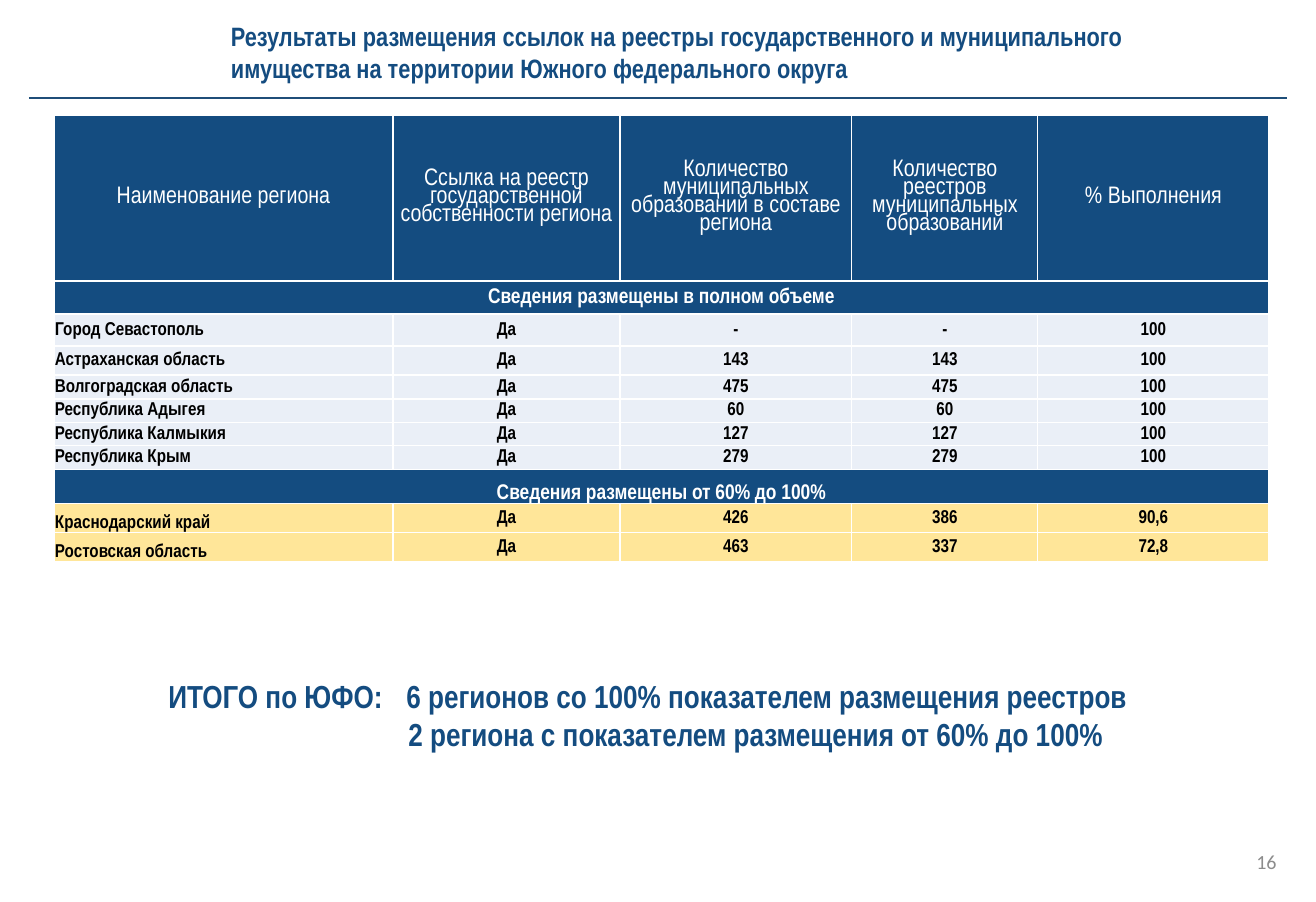
"""Build the slide with registry link results for the Southern Federal District."""
from lxml.etree import SubElement
from pptx import Presentation
from pptx.dml.color import RGBColor
from pptx.enum.shapes import MSO_CONNECTOR
from pptx.enum.text import MSO_ANCHOR, PP_ALIGN
from pptx.oxml.ns import qn
from pptx.util import Pt

PX = 9575
THEME = {
    "navy": RGBColor.from_string("144C80"),
    "rule": RGBColor.from_string("1F4E79"),
    "white": RGBColor.from_string("FFFFFF"),
    "black": RGBColor.from_string("000000"),
    "grey": RGBColor.from_string("8C8C8C"),
    "pale": RGBColor.from_string("EAEFF7"),
    "yellow": RGBColor.from_string("FFE699"),
    "font": "Arial Narrow",
    "number_font": "Calibri",
    "title": 20, "total": 24, "number": 15.1,
    "head": 18, "section": 16, "body": 14,
}


def write(tf, lines, size, color, bold=True, font="font", align=PP_ALIGN.LEFT):
    for i, line in enumerate(lines):
        p = tf.paragraphs[0] if i == 0 else tf.add_paragraph()
        p.alignment = align
        r = p.add_run()
        r.text = line
        r.font.color.rgb = THEME[color]
        values = {"name": THEME[font], "size": Pt(THEME[size]), "bold": bold}
        for name, value in values.items():
            setattr(r.font, name, value)


def add_text(box, lines, size, color, anchor=MSO_ANCHOR.TOP, **style):
    tf = s.shapes.add_textbox(*[v * PX for v in box]).text_frame
    tf.word_wrap = True
    tf.vertical_anchor = anchor
    write(tf, lines, size, color, **style)
    return tf


prs = Presentation()
prs.slide_width, prs.slide_height = 1316 * PX, 902 * PX
s = prs.slides.add_slide(prs.slide_layouts[6])

tf = add_text((225, 18, 1072, 68), [
    "Результаты размещения ссылок на реестры государственного и муниципального",
    "имущества на территории Южного федерального округа",
], "title", "navy", MSO_ANCHOR.MIDDLE)
for side, inset in {"left": 6, "top": 3, "right": 0, "bottom": 3}.items():
    setattr(tf, f"margin_{side}", inset * PX)

rule = s.shapes.add_connector(
    MSO_CONNECTOR.STRAIGHT, 29 * PX, 98 * PX, 1287 * PX, 98 * PX)
rule.line.color.rgb = THEME["rule"]
rule.line.width = Pt(1.75)
SubElement(rule._element.spPr, qn("a:effectLst"))

tf = add_text((369, 672, 929, 87), [
    "6 регионов со 100% показателем размещения реестров",
    "2 региона с показателем размещения от 60% до 100%",
], "total", "navy")
for p, indent in zip(tf.paragraphs, (-2, 0)):
    pPr = p._p.get_or_add_pPr()
    pPr.set("marL", str(30 * PX))
    pPr.set("indent", str(indent * PX))

add_text((159, 672, 265, 48), ["ИТОГО по ЮФО:"], "total", "navy")
add_text((990, 837, 296, 48), ["16"], "number", "grey", MSO_ANCHOR.MIDDLE,
         bold=False, font="number_font", align=PP_ALIGN.RIGHT)

MID, LOW = MSO_ANCHOR.MIDDLE, MSO_ANCHOR.BOTTOM
HEAD = ("head", "white", False, "navy")
SECTION = ("section", "white", True, "navy")
FULL = ("body", "black", True, "pale")
PART = ("body", "black", True, "yellow")
columns = [339, 227, 232, 186, 231]
rows = [
    (166, HEAD, MID, ["Наименование региона",
                      "Ссылка на реестр государственной собственности региона",
                      "Количество муниципальных образований в составе региона",
                      "Количество реестров муниципальных образований",
                      "% Выполнения"]),
    (33, SECTION, MID, ["Сведения размещены в полном объеме"]),
    (32, FULL, MID, ["Город Севастополь", "Да", "-", "-", "100"]),
    (29, FULL, MID, ["Астраханская область", "Да", "143", "143", "100"]),
    (24, FULL, MID, ["Волгоградская область", "Да", "475", "475", "100"]),
    (23, FULL, MID, ["Республика Адыгея", "Да", "60", "60", "100"]),
    (23, FULL, MID, ["Республика Калмыкия", "Да", "127", "127", "100"]),
    (24, FULL, MID, ["Республика Крым", "Да", "279", "279", "100"]),
    (34, SECTION, LOW, ["Сведения размещены от 60% до 100%"]),
    (29, PART, LOW, ["Краснодарский край", "Да", "426", "386", "90,6"]),
    (29, PART, LOW, ["Ростовская область", "Да", "463", "337", "72,8"]),
]
height = sum(row[0] for row in rows)
table = s.shapes.add_table(len(rows), len(columns), 54 * PX, 115 * PX,
                           sum(columns) * PX, height * PX).table
table.first_row = table.horz_banding = False
for column, width in zip(table.columns, columns):
    column.width = width * PX

for i, (row_height, kind, anchor, values) in enumerate(rows):
    size, color, bold, fill = kind
    table.rows[i].height = row_height * PX
    if kind is SECTION:
        table.cell(i, 0).merge(table.cell(i, len(columns) - 1))
    for j in range(len(columns)):
        cell = table.cell(i, j)
        for side, inset in {"left": 1, "top": 1, "right": 1, "bottom": 0}.items():
            setattr(cell, f"margin_{side}", inset * PX)
        cell.vertical_anchor = anchor if j == 0 else MID
        for edge in ("lnL", "lnR", "lnT", "lnB"):
            ln = SubElement(cell._tc.get_or_add_tcPr(), qn(f"a:{edge}"), w=str(Pt(1)))
            SubElement(SubElement(ln, qn("a:solidFill")), qn("a:srgbClr"),
                       val=str(THEME["white"]))
        cell.fill.solid()
        cell.fill.fore_color.rgb = THEME[fill]
        if j < len(values):
            left = j == 0 and size == "body"
            write(cell.text_frame, [values[j]], size, color, bold,
                  align=PP_ALIGN.LEFT if left else PP_ALIGN.CENTER)
        if kind is HEAD:
            cell.text_frame.paragraphs[0].line_spacing = 0.8

prs.save("out.pptx")
